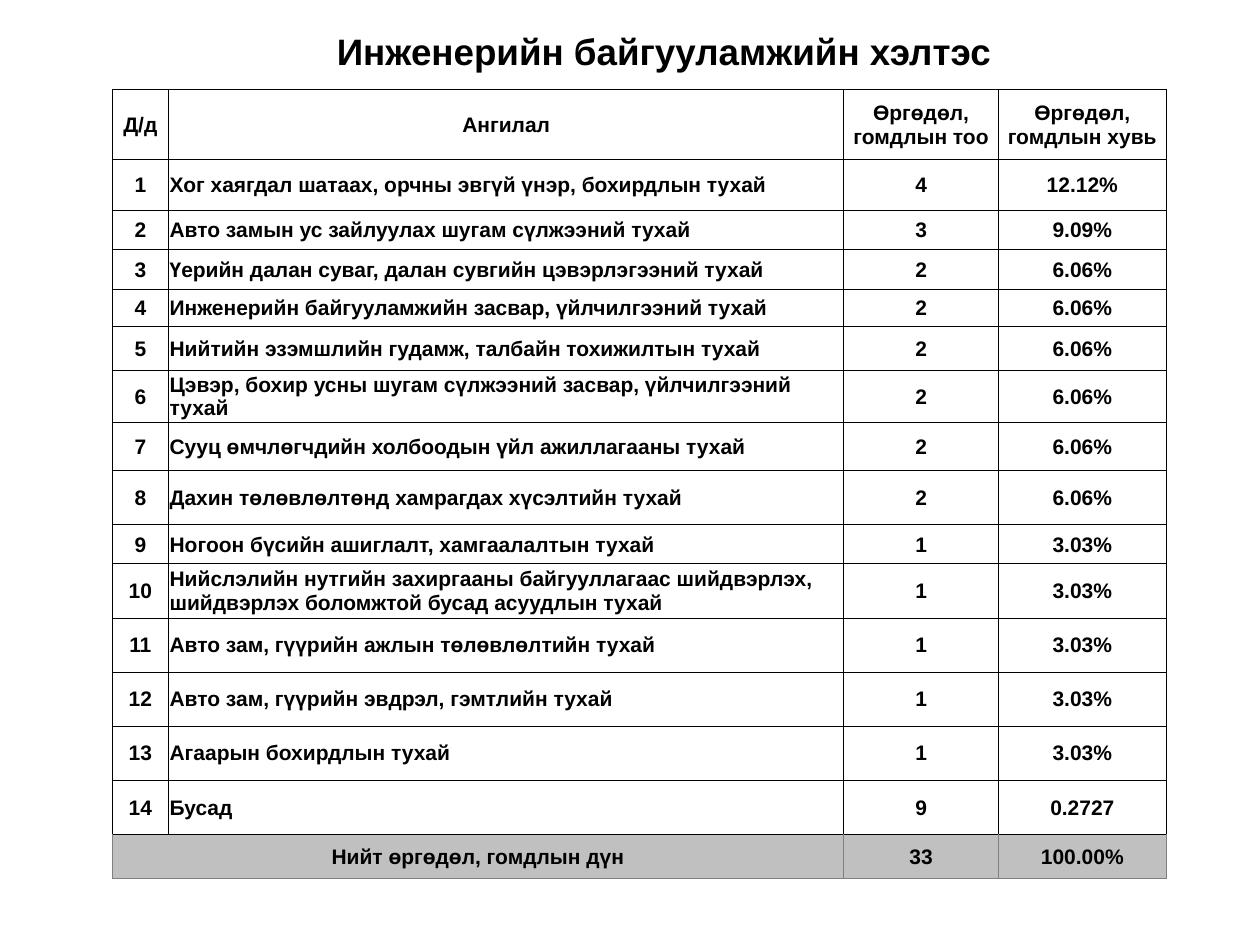
import pptx
import pptx.dml.color
import pptx.enum.text
import pptx.oxml
import pptx.oxml.ns
import pptx.util
from pptx.util import Cm

BLACK = pptx.dml.color.RGBColor(0x00, 0x00, 0x00)
GREY = pptx.dml.color.RGBColor(0x80, 0x80, 0x80)
SILVER = pptx.dml.color.RGBColor(0xC0, 0xC0, 0xC0)
WHITE = pptx.dml.color.RGBColor(0xFF, 0xFF, 0xFF)

CENTER = pptx.enum.text.PP_ALIGN.CENTER
LEFT = pptx.enum.text.PP_ALIGN.LEFT
MIDDLE = pptx.enum.text.MSO_ANCHOR.MIDDLE

TITLE = "Инженерийн байгууламжийн хэлтэс"
HEADER = ("Д/д", "Ангилал", "Өргөдөл, гомдлын тоо", "Өргөдөл, гомдлын хувь")
COMPLAINTS = [
    ("Хог хаягдал шатаах, орчны эвгүй үнэр, бохирдлын тухай", "4", "12.12%"),
    ("Авто замын ус зайлуулах шугам сүлжээний тухай", "3", "9.09%"),
    ("Үерийн далан суваг, далан сувгийн цэвэрлэгээний тухай", "2", "6.06%"),
    ("Инженерийн байгууламжийн засвар, үйлчилгээний тухай", "2", "6.06%"),
    ("Нийтийн эзэмшлийн гудамж, талбайн тохижилтын тухай", "2", "6.06%"),
    ("Цэвэр, бохир усны шугам сүлжээний засвар, үйлчилгээний тухай", "2", "6.06%"),
    ("Сууц өмчлөгчдийн холбоодын үйл ажиллагааны тухай", "2", "6.06%"),
    ("Дахин төлөвлөлтөнд хамрагдах хүсэлтийн тухай", "2", "6.06%"),
    ("Ногоон бүсийн ашиглалт, хамгаалалтын тухай", "1", "3.03%"),
    ("Нийслэлийн нутгийн захиргааны байгууллагаас шийдвэрлэх, "
     "шийдвэрлэх боломжтой бусад асуудлын тухай", "1", "3.03%"),
    ("Авто зам, гүүрийн ажлын төлөвлөлтийн тухай", "1", "3.03%"),
    ("Авто зам, гүүрийн эвдрэл, гэмтлийн тухай", "1", "3.03%"),
    ("Агаарын бохирдлын тухай", "1", "3.03%"),
    ("Бусад", "9", "0.2727"),
]
TOTAL = ("Нийт өргөдөл, гомдлын дүн", "", "33", "100.00%")

COLUMN_WIDTHS = (1.14, 13.61, 3.12, 3.38)
ROW_HEIGHTS = (1.42, 1.02, 0.79, 0.81, 0.74, 0.89, 0.98, 0.98,
               1.09, 0.79, *[1.09] * 5, 0.89)


def apply(target, values):
    for name, value in values.items():
        setattr(target, name, value)


class SlideBuilder:
    font_format = {"name": "Arial", "bold": True}
    border_width = pptx.util.Pt(0.5)
    cell_format = {
        "margin_left": Cm(0.02), "margin_right": Cm(0.02),
        "margin_top": Cm(0.02), "margin_bottom": Cm(0),
        "vertical_anchor": MIDDLE,
    }
    # The wider left margin moves the centred title to the right.
    title_format = {"word_wrap": True, "vertical_anchor": MIDDLE,
                    "margin_left": Cm(1.27)}

    def __init__(self, slide):
        self.slide = slide

    def add_text(self, frame, text, size, alignment):
        para = frame.paragraphs[0]
        para.alignment = alignment
        span = para.add_run()
        span.text = text
        apply(span.font, {**self.font_format, "size": pptx.util.Pt(size)})
        span.font.color.rgb = BLACK
        return para

    def add_title(self, text, left, top, width, height):
        box = self.slide.shapes.add_textbox(Cm(left), Cm(top), Cm(width), Cm(height))
        apply(box.text_frame, self.title_format)
        para = self.add_text(box.text_frame, text, 21, CENTER)
        para.line_spacing = 0.9

    def add_borders(self, cell, colors):
        """Draw the cell's edges; colors maps L, R, T and B in that order."""
        properties = cell._tc.get_or_add_tcPr()
        for side, color in colors.items():
            properties.append(pptx.oxml.parse_xml(
                f'<a:ln{side} {pptx.oxml.ns.nsdecls("a")} w="{self.border_width}">'
                f'<a:solidFill><a:srgbClr val="{color}"/></a:solidFill></a:ln{side}>'))

    def fill_cell(self, cell, text, alignment, fill, colors):
        apply(cell, self.cell_format)
        self.add_borders(cell, colors)
        cell.fill.solid()
        cell.fill.fore_color.rgb = fill
        if text:
            self.add_text(cell.text_frame, text, 12, alignment)

    def add_table(self, rows, left, top):
        """Draw a table whose last row is a total spanning its first two columns."""
        table = self.slide.shapes.add_table(
            len(rows), len(COLUMN_WIDTHS), Cm(left), Cm(top),
            Cm(sum(COLUMN_WIDTHS)), Cm(sum(ROW_HEIGHTS))).table
        apply(table, {"first_row": False, "horz_banding": False})
        for column, width in zip(table.columns, COLUMN_WIDTHS):
            column.width = Cm(width)
        for row, height in zip(table.rows, ROW_HEIGHTS):
            row.height = Cm(height)

        last = len(rows) - 1
        table.cell(last, 0).merge(table.cell(last, 1))
        for row_index, texts in enumerate(rows):
            is_total = row_index == last
            fill = SILVER if is_total else WHITE
            edge = GREY if is_total else BLACK
            colors = {"L": edge, "R": edge, "T": BLACK, "B": edge}
            for column_index, text in enumerate(texts):
                is_category = column_index == 1 and 0 < row_index < last
                self.fill_cell(table.cell(row_index, column_index), text,
                               LEFT if is_category else CENTER, fill, colors)


def main():
    deck = pptx.Presentation()
    apply(deck, {"slide_width": Cm(25.4), "slide_height": Cm(19.05)})
    builder = SlideBuilder(deck.slides.add_slide(deck.slide_layouts[6]))
    builder.add_title(TITLE, 2.26, 0.36, 21.23, 1.45)
    numbered = [(str(number), *entry) for number, entry in enumerate(COMPLAINTS, 1)]
    builder.add_table([HEADER, *numbered, TOTAL], 2.26, 1.8)
    deck.save("out.pptx")


if __name__ == "__main__":
    main()
